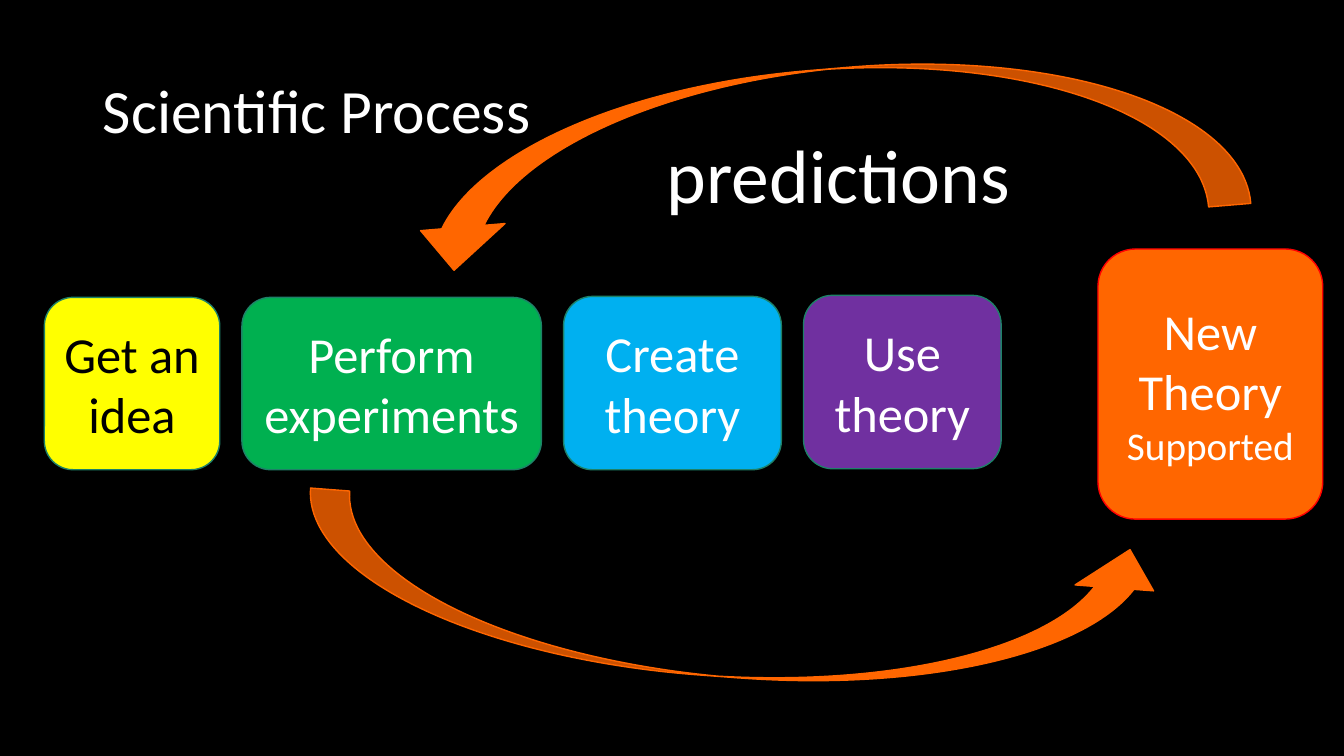
"""Build the Scientific Process slide: five steps linked by two feedback arrows."""
from pptx import Presentation
from pptx.dml.color import RGBColor
from pptx.enum.shapes import MSO_SHAPE
from pptx.enum.text import MSO_ANCHOR, MSO_AUTO_SIZE, PP_ALIGN
from pptx.util import Inches, Pt

BLACK = RGBColor(0x00, 0x00, 0x00)
WHITE = RGBColor(0xFF, 0xFF, 0xFF)
YELLOW = RGBColor(0xFF, 0xFF, 0x00)
GREEN = RGBColor(0x00, 0xB0, 0x50)
BLUE = RGBColor(0x00, 0xB0, 0xF0)
PURPLE = RGBColor(0x70, 0x30, 0xA0)
ORANGE = RGBColor(0xFF, 0x66, 0x00)
RED = RGBColor(0xFF, 0x00, 0x00)
TEAL = RGBColor(0x1E, 0x81, 0x68)


def write(frame, lines, color, align):
    for number, (text, size) in enumerate(lines):
        paragraph = frame.add_paragraph() if number else frame.paragraphs[0]
        paragraph.alignment = align
        run = paragraph.add_run()
        run.text = text
        run.font.color.rgb = color
        for key, value in {"name": "Calibri", "size": Pt(size)}.items():
            setattr(run.font, key, value)


def draw(kind, box, fill, outline):
    shape = slide.shapes.add_shape(kind, *map(Inches, box))
    shape.shadow.inherit = False
    shape.fill.solid()
    shape.fill.fore_color.rgb = fill
    shape.line.color.rgb = outline
    shape.line.width = Pt(1)
    return shape


prs = Presentation()
prs.slide_width, prs.slide_height = Inches(13.33), Inches(7.5)
slide = prs.slides.add_slide(prs.slide_layouts[5])
slide.background.fill.solid()
slide.background.fill.fore_color.rgb = BLACK

heading = slide.shapes.title
heading_place = {"left": 0.92, "top": 0.4, "width": 11.5, "height": 1.45}
for key, value in heading_place.items():
    setattr(heading, key, Inches(value))
heading.text_frame.auto_size = MSO_AUTO_SIZE.NONE
heading.text_frame.vertical_anchor = MSO_ANCHOR.MIDDLE
write(heading.text_frame, [("Scientific Process", 44)], WHITE, PP_ALIGN.LEFT)
heading.text_frame.paragraphs[0].line_spacing = 0.9

steps = [
    ((0.44, 2.95, 1.74, 1.71), YELLOW, TEAL, BLACK, [("Get an idea", 36)]),
    ((2.4, 2.95, 2.97, 1.71), GREEN, TEAL, WHITE, [("Perform", 36), ("experiments", 36)]),
    ((5.59, 2.94, 2.16, 1.72), BLUE, TEAL, WHITE, [("Create theory", 36)]),
    ((7.97, 2.93, 1.96, 1.72), PURPLE, TEAL, WHITE, [("Use theory", 36)]),
    ((10.89, 2.47, 2.23, 2.68), ORANGE, RED, WHITE,
     [("New", 36), ("Theory", 36), ("Supported", 28)]),
]
for box, fill, outline, ink, lines in steps:
    step = draw(MSO_SHAPE.ROUNDED_RECTANGLE, box, fill, outline)
    step.text_frame.word_wrap = True
    step.text_frame.vertical_anchor = MSO_ANCHOR.MIDDLE
    write(step.text_frame, lines, ink, PP_ALIGN.CENTER)

for box, angle in [((3.01, 5.16, 8.54, 1.56), 4.3), ((4, 0.69, 8.35, 1.68), 175.2)]:
    draw(MSO_SHAPE.CURVED_UP_ARROW, box, ORANGE, ORANGE).rotation = angle

predictions = slide.shapes.add_textbox(*map(Inches, (6.49, 1.22, 3.65, 1.01)))
predictions.text_frame.word_wrap = False
predictions.text_frame.auto_size = MSO_AUTO_SIZE.SHAPE_TO_FIT_TEXT
write(predictions.text_frame, [("predictions", 54)], WHITE, PP_ALIGN.CENTER)

prs.save("out.pptx")
